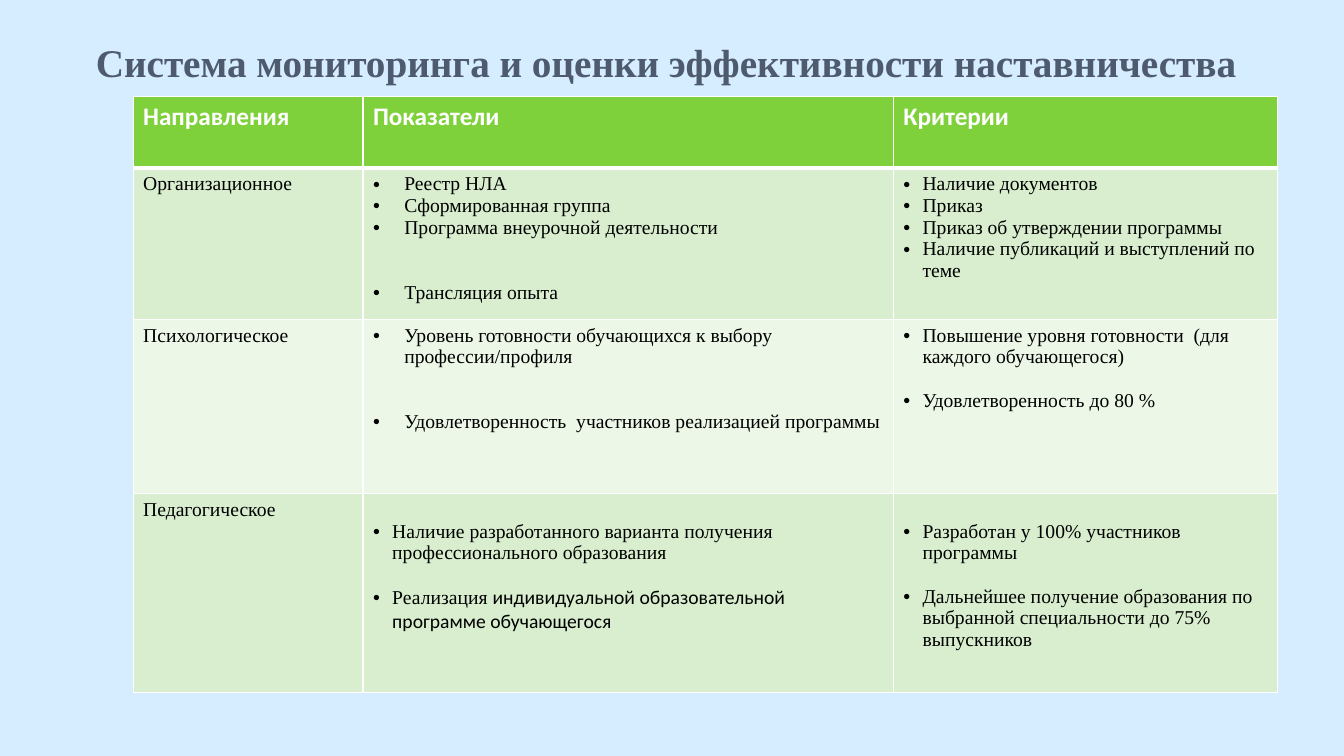
"""Build a slide with a table on monitoring and assessing mentoring."""
from dataclasses import dataclass

from lxml.etree import SubElement as Sub
from pptx import Presentation
from pptx.dml.color import RGBColor as Rgb
from pptx.enum.text import MSO_ANCHOR as Anchor, PP_ALIGN as Align
from pptx.oxml import parse_xml
from pptx.oxml.ns import nsdecls, qn
from pptx.util import Inches, Pt


@dataclass(frozen=True)
class Theme:
    back: str = "D6ECFF"
    title: str = "4E5B6F"
    head: str = "7FD13B"
    odd: str = "D8EECE"
    even: str = "ECF7E8"
    white: str = "FFFFFF"
    black: str = "000000"
    serif: str = "Times New Roman"
    sans: str = "Calibri"
    big: int = 28
    mid: int = 18
    small: int = 14
    line: float = 15.5


theme = Theme()


def add_run(para, text, face, size, color, bold=False):
    run = para.add_run()
    run.text = text
    font = run.font
    font.name, font.size, font.bold = face, Pt(size), bold
    font.color.rgb = Rgb.from_string(color)


def add_edges(cell, top, bottom):
    sides = (("L", 1), ("R", 1), ("T", top), ("B", bottom))
    props = cell._tc.get_or_add_tcPr()
    for spot, (side, width) in enumerate(sides):
        props.insert(spot, parse_xml(
            f'<a:ln{side} {nsdecls("a")} w="{Pt(width)}"><a:solidFill>'
            f'<a:srgbClr val="{theme.white}"/></a:solidFill></a:ln{side}>'))


deck = Presentation()
deck.slide_width, deck.slide_height = Inches(13.33), Inches(7.5)
slide = deck.slides.add_slide(deck.slide_layouts[6])
slide.background.fill.solid()
slide.background.fill.fore_color.rgb = Rgb.from_string(theme.back)

title = slide.shapes.add_textbox(
    Inches(0.7), Inches(0.36), Inches(11.81), Inches(0.49)).text_frame
title.word_wrap = True
title.vertical_anchor = Anchor.MIDDLE
title.margin_left = title.margin_right = title.margin_bottom = 0
title.margin_top = Inches(0.01)
para = title.paragraphs[0]
para.alignment = Align.CENTER
para.space_before = Pt(1)
add_run(para, "Система мониторинга и оценки эффективности наставничества",
        theme.serif, theme.big, theme.title, True)

heads = ("Направления", "Показатели", "Критерии")
# Each item holds the number of free lines above it, then its runs.
rows = (
    ("Организационное",
     ((0, "Реестр НЛА"),
      (0, "Сформированная группа"),
      (0, "Программа внеурочной деятельности"),
      (2, "Трансляция опыта")),
     ((0, "Наличие документов"),
      (0, "Приказ"),
      (0, "Приказ об утверждении программы"),
      (0, "Наличие публикаций и выступлений по  теме"))),
    ("Психологическое",
     ((0, "Уровень готовности обучающихся к выбору профессии/профиля"),
      (2, "Удовлетворенность  участников реализацией программы")),
     ((0, "Повышение уровня готовности  (для каждого обучающегося)"),
      (1, "Удовлетворенность до 80 %"))),
    ("Педагогическое",
     ((1, "Наличие разработанного варианта получения "
          "профессионального образования"),
      (1, "Реализация ",
       "индивидуальной образовательной программе обучающегося")),
     ((1, "Разработан у 100% участников программы"),
      (1, "Дальнейшее получение образования по выбранной специальности "
          "до 75% выпускников"))),
)
widths = (2.28, 5.26, 3.81)
heights = (0.71, 1.5, 1.73, 1.97)

table = slide.shapes.add_table(
    len(heights), len(widths), Inches(1.32), Inches(0.96),
    Inches(sum(widths)), Inches(sum(heights))).table
for col, width in zip(table.columns, widths):
    col.width = Inches(width)
for row, height in zip(table.rows, heights):
    row.height = Inches(height)

for y, row in enumerate((heads, *rows)):
    for x, items in enumerate(row):
        cell = table.cell(y, x)
        cell.fill.solid()
        shade = (theme.odd if y % 2 else theme.even) if y else theme.head
        cell.fill.fore_color.rgb = Rgb.from_string(shade)
        add_edges(cell, 3 if y == 1 else 1, 1 if y else 3)
        frame = cell.text_frame
        if y == 0:
            add_run(frame.paragraphs[0], items,
                    theme.sans, theme.mid, theme.white, True)
            continue
        if x == 0:
            add_run(frame.paragraphs[0], items,
                    theme.serif, theme.small, theme.black)
            continue
        indent = Inches(0.31 if x == 1 and y < 3 else 0.19)
        for spot, (gap, *parts) in enumerate(items):
            para = frame.add_paragraph() if spot else frame.paragraphs[0]
            space = Pt(gap * theme.line)
            if spot:
                para.space_before = space
            else:
                cell.margin_top = Inches(0.05) + space
            props = para._p.get_or_add_pPr()
            props.set("marL", str(indent))
            props.set("indent", str(-indent))
            Sub(props, qn("a:buFont")).set("typeface", "Arial")
            Sub(props, qn("a:buChar")).set("char", "•")
            for text, face in zip(parts, (theme.serif, theme.sans)):
                add_run(para, text, face, theme.small, theme.black)

deck.save("out.pptx")
